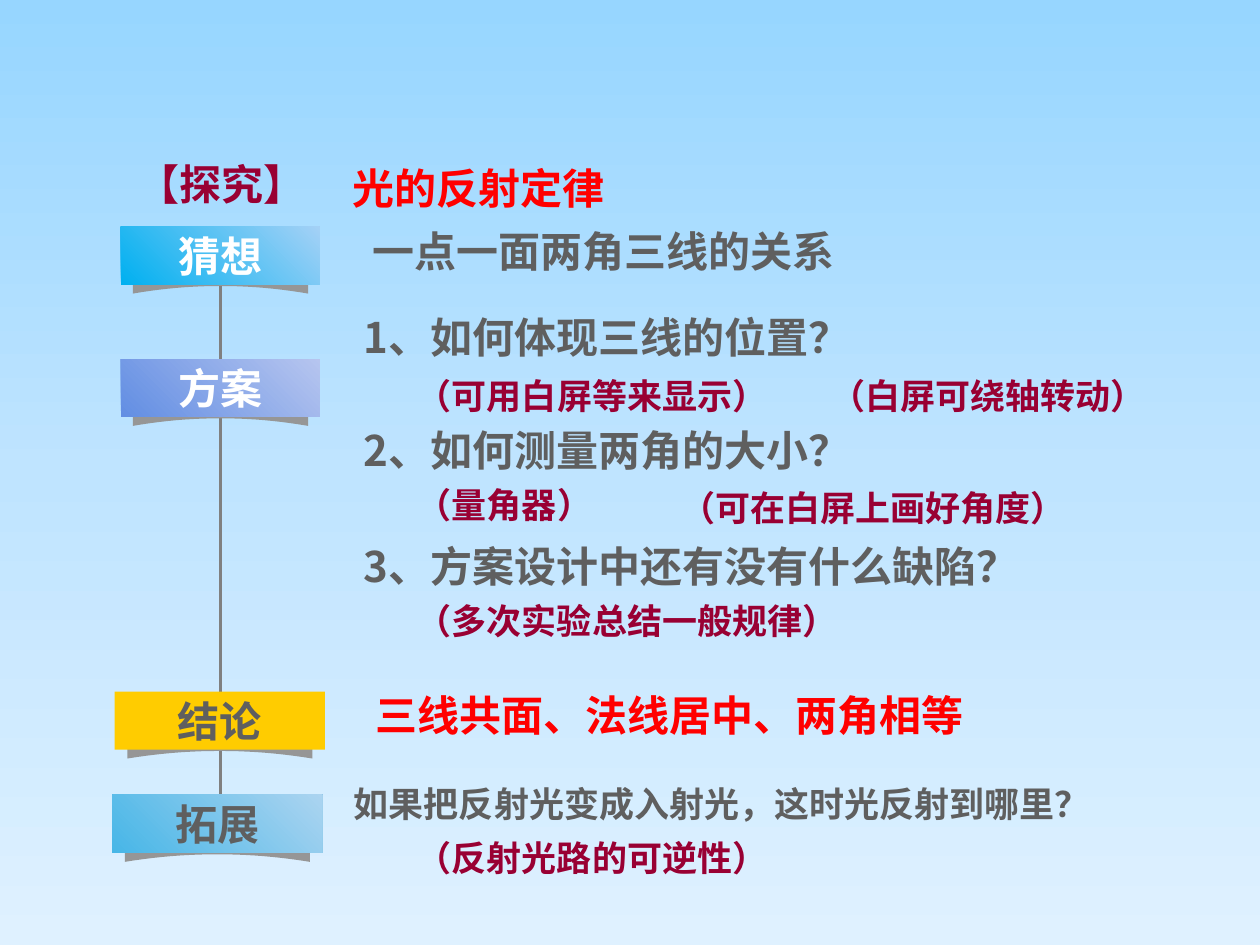
from copy import deepcopy
from dataclasses import dataclass

from lxml import etree
from pptx import Presentation
from pptx.dml.color import RGBColor
from pptx.enum.shapes import MSO_CONNECTOR, MSO_SHAPE
from pptx.enum.text import MSO_ANCHOR, MSO_AUTO_SIZE, PP_ALIGN
from pptx.oxml.ns import qn
from pptx.util import Inches, Pt

RECT = MSO_SHAPE.RECTANGLE
LINE = MSO_CONNECTOR.STRAIGHT
MIDDLE = MSO_ANCHOR.MIDDLE
CENTER = PP_ALIGN.CENTER
GROW = MSO_AUTO_SIZE.SHAPE_TO_FIT_TEXT


@dataclass(frozen=True)
class Theme:
    """Colours, fonts and type sizes of the slide."""
    sky: tuple = ("97D6FF", "BFE4FF", "DFF1FF")
    gray: str = "5F5F5F"
    wine: str = "990033"
    red: str = "FF0000"
    white: str = "FFFFFF"
    shade: str = "969696"
    rail: str = "808080"
    cyan: tuple = ("00B0F0", "A4D1F6")
    blue: tuple = ("628EE3", "B6C5EF")
    gold: tuple = ("FFCC00",)
    aqua: tuple = ("47B6E7", "ABD4F0")
    font: str = "Noto Sans CJK SC"
    label: str = "Calibri"
    big: int = 24
    small: int = 20


THEME = Theme()


def rgb(code):
    """Turn a hex code into a colour."""
    return RGBColor.from_string(code)


def paint(fill, tones, angle):
    """Fill with one colour or with a gradient between two."""
    if len(tones) == 1:
        fill.solid()
        fill.fore_color.rgb = rgb(tones[0])
        return
    fill.gradient()
    fill.gradient_angle = angle
    for stop, tone, place in zip(fill.gradient_stops, tones, (0, 1)):
        stop.color.rgb = rgb(tone)
        stop.position = place


def style(para, size, color, latin):
    """Format the runs of a paragraph."""
    for run in para.runs:
        font = run.font
        font.size, font.bold, font.name = Pt(size), True, latin
        font.color.rgb = rgb(color)
        east = etree.SubElement(run._r.get_or_add_rPr(), qn("a:ea"))
        east.set("typeface", THEME.font)


def write(slide, box, text, color, size=THEME.big):
    """Place one line of text in a box."""
    shape = slide.shapes.add_textbox(*map(Inches, box))
    frame = shape.text_frame
    frame.word_wrap = True
    frame.auto_size = GROW
    frame.text = text
    style(frame.paragraphs[0], size, color, THEME.font)


def sky(slide):
    """Paint the background from deep to pale."""
    top, mid, low = THEME.sky
    fill = slide.background.fill
    paint(fill, (top, low), 270)
    stops = next(slide.element.iter(qn("a:gsLst")))
    stops.insert(1, deepcopy(stops[0]))
    stop = fill.gradient_stops[1]
    stop.color.rgb = rgb(mid)
    stop.position = 0.5


def rail(slide, x, top, end):
    """Draw the line that links the cards."""
    line = slide.shapes.add_connector(
        LINE, Inches(x), Inches(top), Inches(x), Inches(end))
    line.line.color.rgb = rgb(THEME.rail)
    line.line.width = Pt(1.5)
    etree.SubElement(line._element.spPr, qn("a:effectLst"))


def curl(group, box):
    """Draw the curved shade under a card."""
    left, top, wide, high = box
    half, low, steps = wide / 2, top + high, 20
    mid = left + half
    arc = []
    for step in range(steps + 1):
        t = 1 - 2 * step / steps
        arc.append((mid + half * t, low - 0.06 * (1 - t * t)))
    edge = arc + [(left, top + 0.05), (mid, top), (left + wide, top + 0.05)]
    points = [(Inches(x), Inches(y)) for x, y in edge]
    pen = group.shapes.build_freeform(*points[0], scale=1.0)
    pen.add_line_segments(points[1:], close=True)
    shape = pen.convert_to_shape()
    shape.shadow.inherit = False
    paint(shape.fill, (THEME.shade,), 0)
    shape.line.fill.background()


def card(slide, box, text, tones, color):
    """Place a label card with its shade."""
    left, top, wide, high = box
    group = slide.shapes.add_group_shape()
    inset = 0.06 * wide
    curl(group, (left + inset, top + 0.31, wide - 2 * inset, 0.22))
    shape = group.shapes.add_shape(RECT, *map(Inches, box))
    shape.shadow.inherit = False
    paint(shape.fill, tones, 45)
    shape.line.fill.background()
    frame = shape.text_frame
    frame.word_wrap = False
    frame.vertical_anchor = MIDDLE
    frame.text = text
    para = frame.paragraphs[0]
    para.alignment = CENTER
    style(para, THEME.big, color, THEME.label)


def steps(slide):
    """Place the linked cards down the left side."""
    rail(slide, 1.75, 2.21, 6.62)
    for left, top, wide, text, tones, color in (
            (0.96, 1.8, 1.58, "猜想", THEME.cyan, THEME.white),
            (0.89, 6.31, 1.67, "拓展", THEME.aqua, THEME.gray),
            (0.96, 2.85, 1.58, "方案", THEME.blue, THEME.white),
            (0.91, 5.49, 1.67, "结论", THEME.gold, THEME.gray)):
        card(slide, (left, top, wide, 0.46), text, tones, color)


def head(slide, box):
    """Place the topic and the guess."""
    left, top, wide, high = box
    write(slide, (left, top, 2.65, high), "【探究】", THEME.wine)
    write(slide, (left + 1.71, top + 0.03, 2.76, high), "光的反射定律", THEME.red)
    write(slide, (left + 1.87, top + 0.53, wide - 1.87, high),
          "一点一面两角三线的关系", THEME.gray)


def plan(slide, box):
    """Place the numbered questions and their answers."""
    left, top, wide, high = box
    for drop, text in ((0, "1、如何体现三线的位置？"),
                       (0.9, "2、如何测量两角的大小？"),
                       (1.82, "3、方案设计中还有没有什么缺陷？")):
        write(slide, (left, top + drop, wide, high), text, THEME.gray)
    for shift, drop, span, text in (
            (0.42, 0.5, 3.28, "（可用白屏等来显示）"),
            (3.7, 0.5, 2.98, "（白屏可绕轴转动）"),
            (0.42, 1.37, 2.09, "（量角器）"),
            (2.51, 1.39, 4.02, "（可在白屏上画好角度）"),
            (0.42, 2.29, 4.37, "（多次实验总结一般规律）")):
        write(slide, (left + shift, top + drop, span, 0.43), text,
              THEME.wine, THEME.small)


def close(slide, box):
    """Place the finding and the further question."""
    left, top, wide, high = box
    write(slide, (left + 0.17, top, wide - 0.17, high),
          "三线共面、法线居中、两角相等", THEME.red)
    write(slide, (left, top + 0.74, wide, 0.43),
          "如果把反射光变成入射光，这时光反射到哪里？", THEME.gray, THEME.small)
    write(slide, (left + 0.5, top + 1.17, 3.66, 0.43),
          "（反射光路的可逆性）", THEME.wine, THEME.small)


def main():
    """Build the slide and save it."""
    deck = Presentation()
    deck.slide_width, deck.slide_height = Inches(10), Inches(7.5)
    slide = deck.slides.add_slide(deck.slide_layouts[6])
    sky(slide)
    steps(slide)
    head(slide, (0.99, 1.21, 6.59, 0.5))
    plan(slide, (2.79, 2.42, 6.75, 0.5))
    close(slide, (2.71, 5.42, 6.31, 0.5))
    deck.save("out.pptx")


if __name__ == "__main__":
    main()
